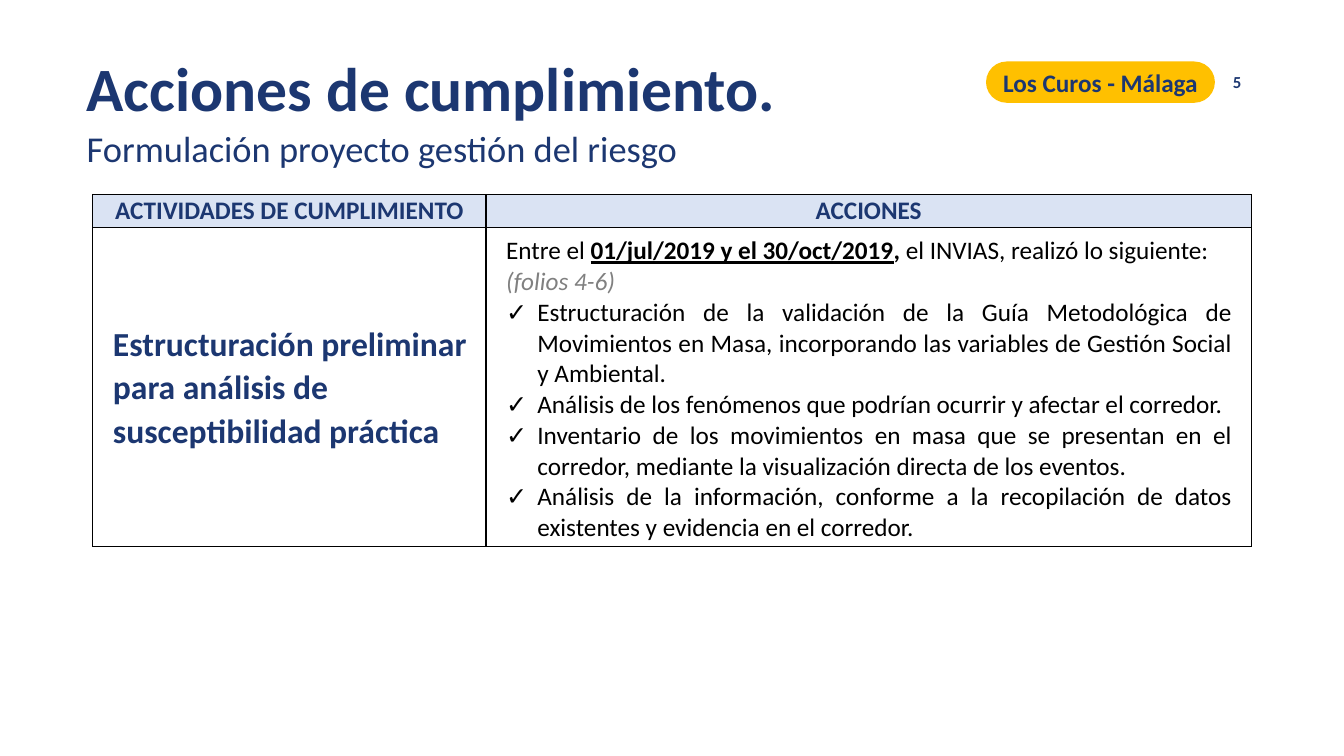
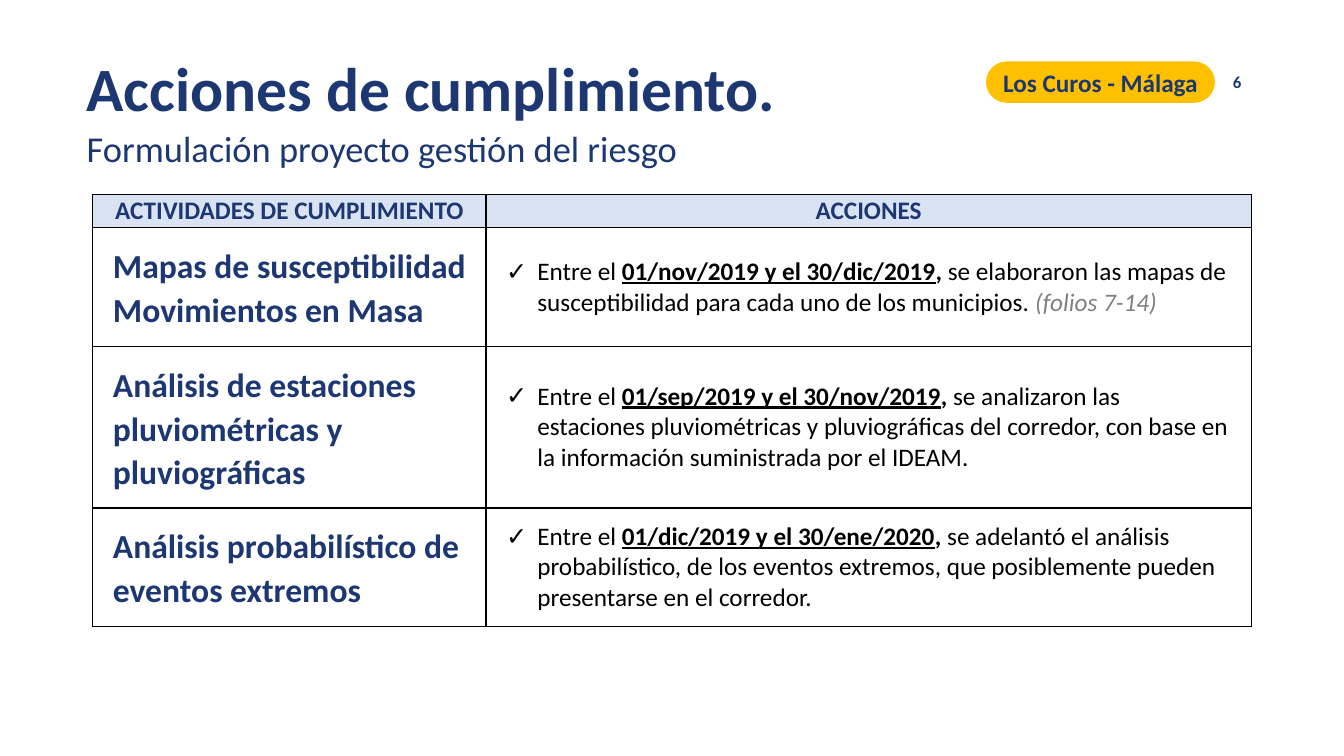
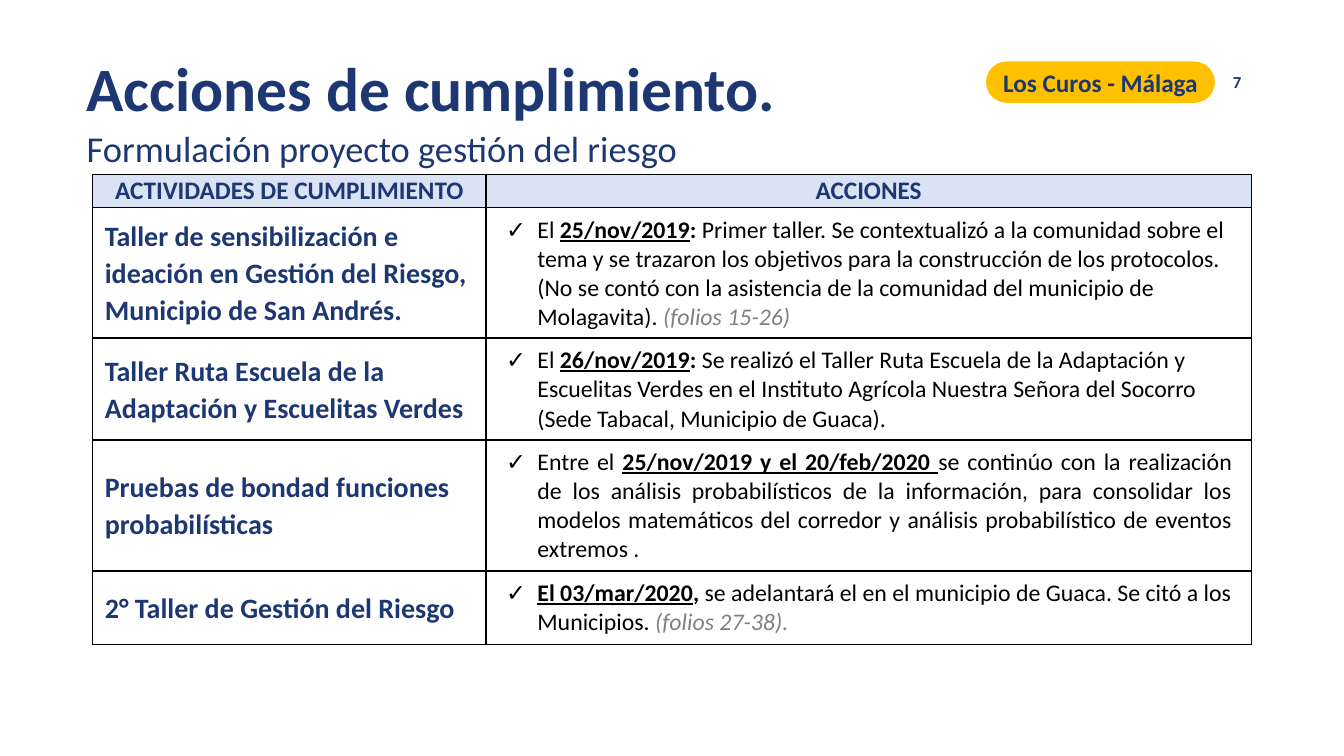
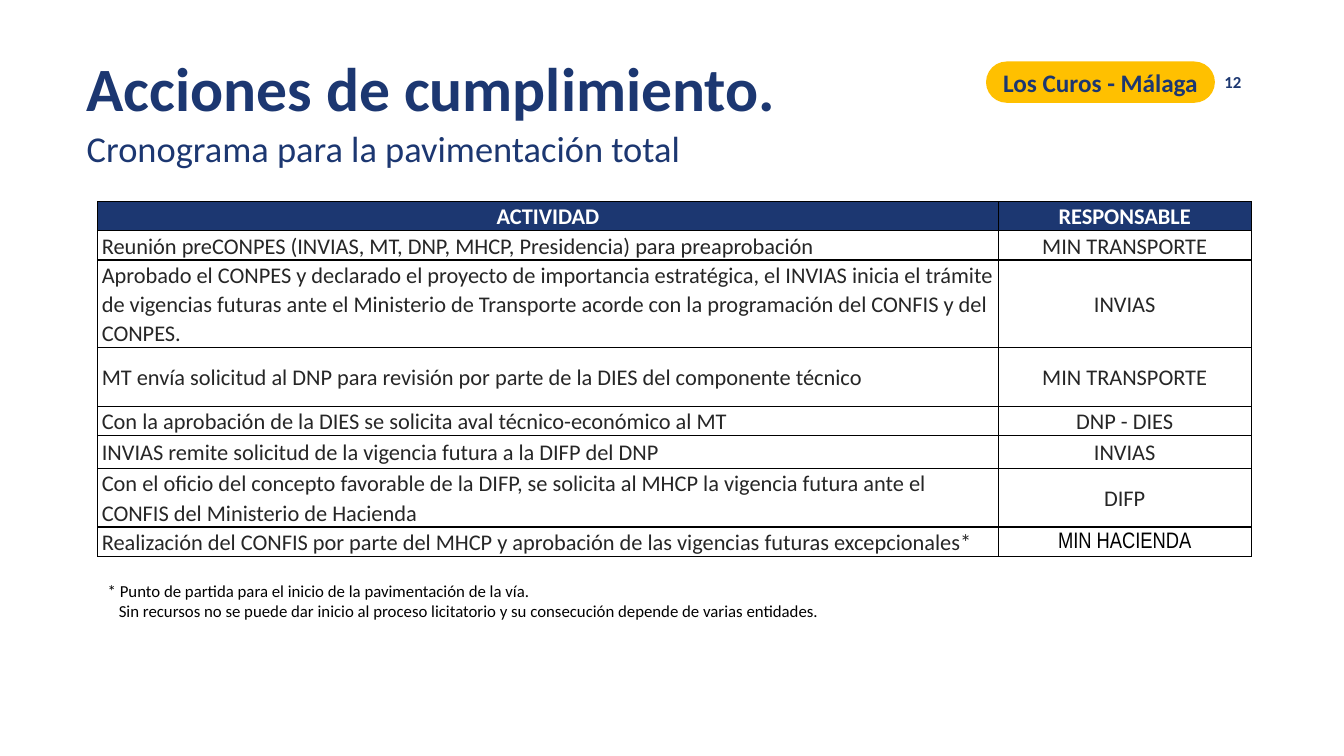
"""Build four slides on compliance actions for the Los Curos - Málaga road."""
import dataclasses

import lxml.etree
import pptx
import pptx.dml.color
import pptx.enum.shapes
import pptx.enum.text
import pptx.oxml.ns
import pptx.util

Inches = pptx.util.Inches
Pt = pptx.util.Pt
RGB = pptx.dml.color.RGBColor.from_string
Align = pptx.enum.text.PP_ALIGN
Anchor = pptx.enum.text.MSO_ANCHOR
qn = pptx.oxml.ns.qn


@dataclasses.dataclass(frozen=True)
class Theme:
    font: str = "Calibri"
    narrow_font: str = "Arial Narrow"
    navy: str = "1C3771"
    yellow: str = "FFC000"
    pale_blue: str = "DAE3F3"
    black: str = "000000"
    dark: str = "262626"
    gray: str = "808080"
    white: str = "FFFFFF"
    title: int = 44
    subtitle: int = 26
    heading: int = 18
    schedule: int = 16
    small: int = 12
    spacing: float = 1.07


theme = Theme()


def write(paragraph, text, size, color, bold=False, align=Align.LEFT,
          spacing=1.0, font=theme.font, indent=0, bullet=None):
    """Fill a paragraph with plain text or with (text, style) pairs."""
    properties = paragraph._p.get_or_add_pPr()
    if indent:
        properties.set("marL", str(Inches(indent)))
    if bullet:
        properties.set("indent", str(-Inches(indent)))
        lxml.etree.SubElement(properties, qn("a:buFont")).set("typeface", font)
        lxml.etree.SubElement(properties, qn("a:buChar")).set("char", bullet)
    paragraph.alignment = align
    paragraph.line_spacing = spacing
    paragraph.font.name = font
    paragraph.font.size = Pt(size)
    paragraph.font.bold = bold
    paragraph.font.color.rgb = RGB(color)
    for words, style in [(text, "")] if isinstance(text, str) else text:
        run = paragraph.add_run()
        run.text = words
        if style in ("date", "bold"):
            run.font.bold = True
            run.font.underline = style == "date"
        elif style == "folios":
            run.font.italic = True
            run.font.color.rgb = RGB(theme.gray)


def frame_cell(cell, margins, fill=None, anchor=Anchor.MIDDLE):
    """Set a cell's margins, borders and fill, and return its first paragraph."""
    cell.margin_left, cell.margin_top, cell.margin_right, cell.margin_bottom = map(Inches, margins)
    cell.vertical_anchor = anchor
    cell_properties = cell._tc.get_or_add_tcPr()
    for side in ("a:lnL", "a:lnR", "a:lnT", "a:lnB"):
        border = lxml.etree.SubElement(cell_properties, qn(side), w=str(Pt(1)))
        solid = lxml.etree.SubElement(border, qn("a:solidFill"))
        lxml.etree.SubElement(solid, qn("a:srgbClr"), val=theme.black)
    if fill:
        cell.fill.solid()
        cell.fill.fore_color.rgb = RGB(fill)
    else:
        cell.fill.background()
    return cell.text_frame.paragraphs[0]


risk_project = "Formulación proyecto gestión del riesgo"
headings = [
    (risk_project, "5"),
    (risk_project, "6"),
    (risk_project, "7"),
    ("Cronograma para la pavimentación total", "12"),
]

action_tables = [
    dict(top=1.93, activity_size=24, action_size=18, activity_margins=(0.2, 0.08, 0.18, 0.08), rows=[
        (3.16, "Estructuración preliminar para análisis de susceptibilidad práctica", [
            ("intro", [("Entre el ", ""), ("01/jul/2019 y el 30/oct/2019", "date"), (", ", "bold"),
                       ("el INVIAS, realizó lo siguiente: ", ""), ("(folios 4-6)", "folios")]),
            ("justified", "Estructuración de la validación de la Guía Metodológica de Movimientos en Masa, "
                          "incorporando las variables de Gestión Social y Ambiental."),
            ("justified", "Análisis de los fenómenos que podrían ocurrir y afectar el corredor."),
            ("justified", "Inventario de los movimientos en masa que se presentan en el corredor, "
                          "mediante la visualización directa de los eventos."),
            ("justified", "Análisis de la información, conforme a la recopilación de datos "
                          "existentes y evidencia en el corredor."),
        ]),
    ]),
    dict(top=1.93, activity_size=24, action_size=18, activity_margins=(0.2, 0.16, 0.18, 0.16), rows=[
        (1.17, "Mapas de susceptibilidad Movimientos en Masa", [
            ("check", [("Entre el ", ""), ("01/nov/2019 y el 30/dic/2019", "date"), (",", "bold"),
                       (" se elaboraron las mapas de susceptibilidad para cada uno de los municipios. ", ""),
                       ("(folios 7-14)", "folios")]),
        ]),
        (1.6, "Análisis de estaciones pluviométricas y pluviográficas", [
            ("check", [("Entre el ", ""), ("01/sep/2019 y el 30/nov/2019", "date"), (",", "bold"),
                       (" se analizaron las estaciones pluviométricas y pluviográficas del corredor, "
                        "con base en la información suministrada por el IDEAM.", "")]),
        ]),
        (1.17, "Análisis probabilístico de eventos extremos", [
            ("check", [("Entre el ", ""), ("01/dic/2019 y el 30/ene/2020", "date"), (", ", "bold"),
                       ("se adelantó el análisis probabilístico, de los eventos extremos, "
                        "que posiblemente pueden presentarse en el corredor.", "")]),
        ]),
    ]),
    dict(top=1.73, activity_size=20, action_size=17, activity_margins=(0.12, 0.08, 0.18, 0.08), rows=[
        (1.29, "Taller de sensibilización e ideación en Gestión del Riesgo, Municipio de San Andrés.", [
            ("check", [("El ", ""), ("25/nov/2019", "date"), (":", "bold"),
                       (" Primer taller. Se contextualizó a la comunidad sobre el tema y se trazaron los "
                        "objetivos para la construcción de los protocolos. (No se contó con la asistencia "
                        "de la comunidad del municipio de Molagavita). ", ""),
                       ("(folios 15-26)", "folios")]),
        ]),
        (1.0, "Taller Ruta Escuela de la Adaptación y Escuelitas Verdes", [
            ("check", [("El ", ""), ("26/nov/2019", "date"), (":", "bold"),
                       (" Se realizó el Taller Ruta Escuela de la Adaptación y Escuelitas Verdes en el "
                        "Instituto Agrícola Nuestra Señora del Socorro (Sede Tabacal, Municipio de Guaca).", "")]),
        ]),
        (1.3, "Pruebas de bondad funciones probabilísticas", [
            ("justified", [("Entre el ", ""), ("25/nov/2019 y el 20/feb/2020 ", "date"),
                           ("se continúo con la realización de los análisis probabilísticos de la información, "
                            "para consolidar los modelos matemáticos del corredor y análisis probabilístico "
                            "de eventos extremos .", "")]),
        ]),
        (0.72, "2° Taller de Gestión del Riesgo", [
            ("check", [("El 03/mar/2020", "date"), (",", "bold"),
                       (" se adelantará el en el municipio de Guaca. Se citó a los Municipios. ", ""),
                       ("(folios 27-38).", "folios")]),
        ]),
    ]),
]

schedule_rows = [
    (0.29, "ACTIVIDAD", "RESPONSABLE"),
    (0.29, "Reunión preCONPES (INVIAS, MT, DNP, MHCP, Presidencia) para preaprobación", "MIN TRANSPORTE"),
    (0.87, "Aprobado el CONPES y declarado el proyecto de importancia estratégica, el INVIAS inicia el trámite "
           "de vigencias futuras ante el Ministerio de Transporte acorde con la programación del CONFIS y del "
           "CONPES.", "INVIAS"),
    (0.58, "MT envía solicitud al DNP para revisión por parte de la DIES del componente técnico", "MIN TRANSPORTE"),
    (0.29, "Con la aprobación de la DIES se solicita aval técnico-económico al MT", "DNP - DIES"),
    (0.33, "INVIAS remite solicitud de la vigencia futura a la DIFP del DNP", "INVIAS"),
    (0.58, "Con el oficio del concepto favorable de la DIFP, se solicita al MHCP la vigencia futura ante el "
           "CONFIS del Ministerio de Hacienda", "DIFP"),
    (0.29, "Realización del CONFIS por parte del MHCP y aprobación de las vigencias futuras excepcionales*",
     "MIN HACIENDA"),
]

deck = pptx.Presentation()
deck.slide_width, deck.slide_height = Inches(13.33), Inches(7.5)

slides = []
for subtitle, number in headings:
    slide = deck.slides.add_slide(deck.slide_layouts[5])
    slides.append(slide)

    title = slide.shapes.title
    title.left, title.top, title.width, title.height = map(Inches, (0.76, 0.39, 9.02, 1.34))
    title.text_frame.vertical_anchor = Anchor.TOP
    title.text_frame.auto_size = pptx.enum.text.MSO_AUTO_SIZE.NONE
    write(title.text_frame.paragraphs[0], "Acciones de cumplimiento.", theme.title, theme.navy,
          bold=True, spacing=theme.spacing)
    write(title.text_frame.add_paragraph(), subtitle, theme.subtitle, theme.navy, spacing=theme.spacing)

    road = slide.shapes.add_shape(pptx.enum.shapes.MSO_SHAPE.ROUNDED_RECTANGLE,
                                  Inches(9.78), Inches(0.61), Inches(2.27), Inches(0.41))
    road.adjustments[0] = 0.5
    road.shadow.inherit = False
    road.fill.solid()
    road.fill.fore_color.rgb = RGB(theme.yellow)
    road.line.fill.background()
    road.text_frame.vertical_anchor = Anchor.MIDDLE
    write(road.text_frame.paragraphs[0], "Los Curos - Málaga", theme.heading, theme.navy,
          bold=True, align=Align.CENTER)

    page = slide.shapes.add_textbox(Inches(9.41), Inches(0.61), Inches(3), Inches(0.4)).text_frame
    page.word_wrap = True
    page.vertical_anchor = Anchor.MIDDLE
    write(page.paragraphs[0], number, theme.small, theme.navy, bold=True, align=Align.RIGHT)

for slide, content in zip(slides, action_tables):
    heights = [0.33] + [height for height, _, _ in content["rows"]]
    actions = slide.shapes.add_table(len(heights), 2, Inches(0.92), Inches(content["top"]),
                                     Inches(11.49), Inches(sum(heights))).table
    actions.first_row = actions.horz_banding = False
    for column, width in zip(actions.columns, (3.9, 7.59)):
        column.width = Inches(width)
    for row, height in zip(actions.rows, heights):
        row.height = Inches(height)
    for column, heading in enumerate(("ACTIVIDADES DE CUMPLIMIENTO", "ACCIONES")):
        write(frame_cell(actions.cell(0, column), (0, 0, 0, 0), theme.pale_blue), heading,
              theme.heading, theme.navy, bold=True, align=Align.CENTER)
    for row, (_, activity, steps) in enumerate(content["rows"], 1):
        write(frame_cell(actions.cell(row, 0), content["activity_margins"]), activity,
              content["activity_size"], theme.navy, bold=True, spacing=theme.spacing)
        step_cell = actions.cell(row, 1)
        paragraph = frame_cell(step_cell, (0.2, 0.08, 0.19, 0.08))
        for position, (kind, text) in enumerate(steps):
            if position:
                paragraph = step_cell.text_frame.add_paragraph()
            write(paragraph, text, content["action_size"], theme.black,
                  align=Align.JUSTIFY if kind == "justified" else Align.LEFT,
                  indent=0 if kind == "intro" else 0.31,
                  bullet=None if kind == "intro" else "✓")

schedule = slides[-1].shapes.add_table(len(schedule_rows), 2, Inches(0.97), Inches(2), Inches(11.44),
                                       Inches(sum(height for height, _, _ in schedule_rows))).table
schedule.first_row = schedule.horz_banding = False
for column, width in zip(schedule.columns, (8.93, 2.51)):
    column.width = Inches(width)
for row, (height, *texts) in enumerate(schedule_rows):
    schedule.rows[row].height = Inches(height)
    header = row == 0
    for column, text in enumerate(texts):
        paragraph = frame_cell(schedule.cell(row, column), (0.04, 0, 0.04, 0),
                               theme.navy if header else None, Anchor.TOP if header else Anchor.MIDDLE)
        treasury = text == "MIN HACIENDA"
        write(paragraph, text, theme.schedule,
              theme.white if header else theme.black if treasury else theme.dark,
              bold=header, align=Align.CENTER if header or column else Align.LEFT,
              spacing=theme.spacing, font=theme.narrow_font if treasury else theme.font)

footnote = slides[-1].shapes.add_textbox(Inches(0.97), Inches(5.71), Inches(11.53), Inches(0.71)).text_frame
footnote.word_wrap = True
write(footnote.paragraphs[0], "* Punto de partida para el inicio de la pavimentación de la vía.",
      theme.small, theme.black)
write(footnote.add_paragraph(), "Sin recursos no se puede dar inicio al proceso licitatorio y su consecución "
      "depende de varias entidades.", theme.small, theme.black, indent=0.11)

deck.save("out.pptx")
